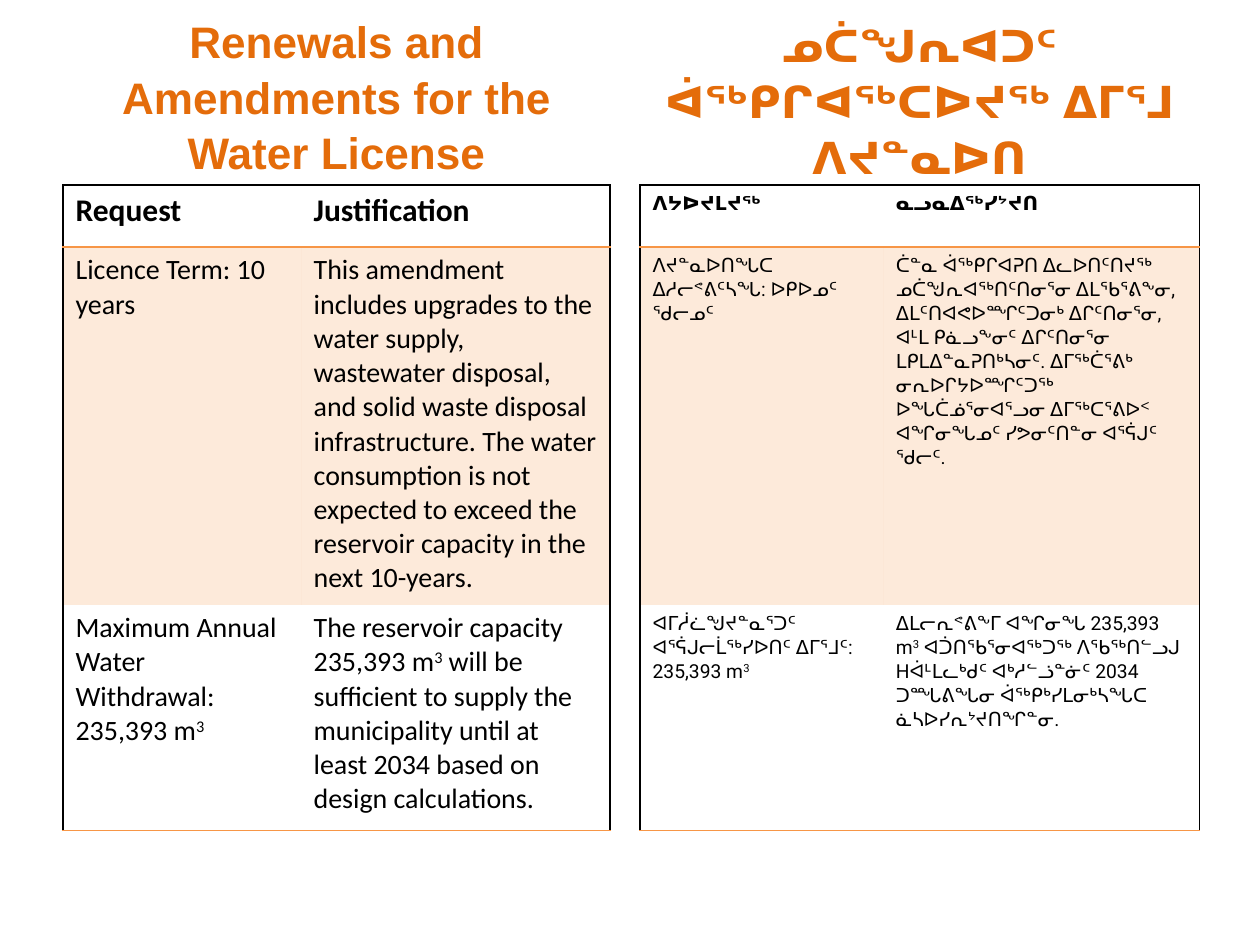
from lxml.etree import SubElement
from pptx import Presentation
from pptx.dml.color import RGBColor
from pptx.enum.text import MSO_ANCHOR, PP_ALIGN
from pptx.oxml import parse_xml
from pptx.oxml.ns import nsdecls, qn
from pptx.util import Inches, Pt

COLORS = {"title": "E46C0A", "accent": "F79646", "ink": "000000"}
SLIDE_WIDTH, SLIDE_HEIGHT = 10, 7.5
TITLE_TOP, TABLE_TOP = 0.12, 1.47
ROW_HEIGHTS = (0.49, 2.84, 1.79)

ENGLISH = {
    "left": 0.5, "columns": (1.89, 2.45), "title_height": 1.27,
    "font": "Calibri", "head_size": 18, "body_size": 16,
    "line_spacing": None, "space_after": None,
    "title": "Renewals and Amendments for the Water License",
    "rows": (
        ("Request", "Justification"),
        ("Licence Term: 10 years",
         "This amendment includes upgrades to the water supply, wastewater disposal, "
         "and solid waste disposal infrastructure. The water consumption is not expected "
         "to exceed the reservoir capacity in the next 10-years."),
        ("Maximum Annual Water Withdrawal: 235,393 m^3",
         "The reservoir capacity 235,393 m^3^ will be sufficient to supply the "
         "municipality until at least 2034 based on design calculations."),
    ),
}
INUKTITUT = {
    "left": 5.08, "columns": (1.93, 2.51), "title_height": 1.34,
    "font": "Roboto", "head_size": 11, "body_size": 11,
    "line_spacing": 1.07, "space_after": 8,
    "title": "ᓄᑖᖑᕆᐊᑐᑦ ᐋᖅᑭᒋᐊᖅᑕᐅᔪᖅ ᐃᒥᕐᒧ ᐱᔪᓐᓇᐅᑎ",
    "rows": (
        ("ᐱᔭᐅᔪᒪᔪᖅ", "ᓇᓗᓇᐃᖅᓯᔾᔪᑎ"),
        ("ᐱᔪᓐᓇᐅᑎᖓᑕ ᐃᓱᓕᕝᕕᑦᓴᖓ: ᐅᑭᐅᓄᑦ ᖁᓕᓄᑦ",
         "ᑖᓐᓇ ᐋᖅᑭᒋᐊᕈᑎ ᐃᓚᐅᑎᑦᑎᔪᖅ ᓄᑖᖑᕆᐊᖅᑎᑦᑎᓂᕐᓂ ᐃᒪᖃᕐᕕᖕᓂ, ᐃᒪᑦᑎᐊᕙᐅᙱᑦᑐᓂᒃ ᐃᒋᑦᑎᓂᕐᓂ, "
         "ᐊᒻᒪ ᑭᓈᓗᖕᓂᑦ ᐃᒋᑦᑎᓂᕐᓂ ᒪᑭᒪᐃᓐᓇᕈᑎᒃᓴᓂᑦ. ᐃᒥᖅᑖᕐᕕᒃ ᓂᕆᐅᒋᔭᐅᙱᑦᑐᖅ ᐅᖓᑖᓅᕐᓂᐊᕐᓗᓂ "
         "ᐃᒥᖅᑕᕐᕕᐅᑉ ᐊᖏᓂᖓᓄᑦ ᓯᕗᓂᑦᑎᓐᓂ ᐊᕐᕌᒍᑦ ᖁᓕᑦ."),
        ("ᐊᒥᓲᓛᖑᔪᓐᓇᕐᑐᑦ ᐊᕐᕌᒍᓕᒫᖅᓯᐅᑎᑦ ᐃᒥᕐᒧᑦ: 235,393 m^3",
         "ᐃᒪᓕᕆᕝᕕᖕᒥ ᐊᖏᓂᖓ 235,393 m^3^ ᐊᑑᑎᖃᕐᓂᐊᖅᑐᖅ ᐱᖃᖅᑎᓪᓗᒍ Hᐋᒻᒪᓚᒃᑯᑦ ᐊᒃᓱᓪᓘᓐᓃᑦ 2034 "
         "ᑐᙵᕕᖓᓂ ᐋᖅᑭᒃᓯᒪᓂᒃᓴᖓᑕ ᓈᓴᐅᓯᕆᔾᔪᑎᖏᓐᓂ."),
    ),
}


def add_runs(para, text, font, size, color, bold=False):
    """Add text to a paragraph; parts between carets are superscript."""
    for index, part in enumerate(text.split("^")):
        if not part:
            continue
        span = para.add_run()
        span.text = part
        span.font.name = font
        span.font.size = Pt(size)
        span.font.bold = bold
        span.font.color.rgb = RGBColor.from_string(COLORS[color])
        if index % 2:
            span.font._element.set("baseline", "30000")


def add_title(page, text, left, top, width, height):
    box = page.shapes.add_textbox(left, top, width, height)
    frame = box.text_frame
    frame.word_wrap = True
    frame.vertical_anchor = MSO_ANCHOR.MIDDLE
    para = frame.paragraphs[0]
    para.alignment = PP_ALIGN.CENTER
    para.line_spacing = 1.05
    add_runs(para, text, "Arial", 25.2, "title", bold=True)


def set_borders(cell, edges):
    """Draw the named edges in their colours and clear the others."""
    properties = cell._tc.get_or_add_tcPr()
    for index, side in enumerate("LRTB"):
        color = edges.get(side)
        paint = (f'<a:solidFill><a:srgbClr val="{COLORS[color]}"/></a:solidFill>'
                 if color else "<a:noFill/>")
        properties.insert(index, parse_xml(
            f'<a:ln{side} {nsdecls("a")} w="12700">{paint}</a:ln{side}>'))


def fill_cell(cell, tinted):
    if not tinted:
        cell.fill.background()
        return
    cell.fill.solid()
    cell.fill.fore_color.rgb = RGBColor.from_string(COLORS["accent"])
    color = cell._tc.tcPr.find(".//" + qn("a:srgbClr"))
    SubElement(color, qn("a:alpha")).set("val", "20000")


def add_request_table(page, content, left, top, width, height):
    rows = content["rows"]
    table = page.shapes.add_table(len(rows), 2, left, top, width, height).table
    table.first_row = table.horz_banding = False
    for column, share in zip(table.columns, content["columns"]):
        column.width = int(width * share / sum(content["columns"]))
    for row, share in zip(table.rows, ROW_HEIGHTS):
        row.height = int(height * share / sum(ROW_HEIGHTS))

    for r, texts in enumerate(rows):
        header = r == 0
        for c, text in enumerate(texts):
            cell = table.cell(r, c)
            para = cell.text_frame.paragraphs[0]
            para.line_spacing = content["line_spacing"]
            if content["space_after"]:
                para.space_after = Pt(content["space_after"])
            size = content["head_size"] if header else content["body_size"]
            add_runs(para, text, content["font"], size, "ink", bold=header)
            fill_cell(cell, tinted=r == 1)
            edges = {"LR"[c]: "ink"}
            if header:
                edges.update(T="ink", B="accent")
            elif r == 1:
                edges["T"] = "accent"
            else:
                edges["B"] = "accent"
            set_borders(cell, edges)


def add_language_half(page, content):
    left = Inches(content["left"])
    width = Inches(sum(content["columns"]))
    add_title(page, content["title"], left, Inches(TITLE_TOP), width,
              Inches(content["title_height"]))
    add_request_table(page, content, left, Inches(TABLE_TOP), width,
                      Inches(sum(ROW_HEIGHTS)))


def main():
    deck = Presentation()
    deck.slide_width, deck.slide_height = Inches(SLIDE_WIDTH), Inches(SLIDE_HEIGHT)
    page = deck.slides.add_slide(deck.slide_layouts[6])
    for content in (INUKTITUT, ENGLISH):
        add_language_half(page, content)
    deck.save("out.pptx")


if __name__ == "__main__":
    main()
